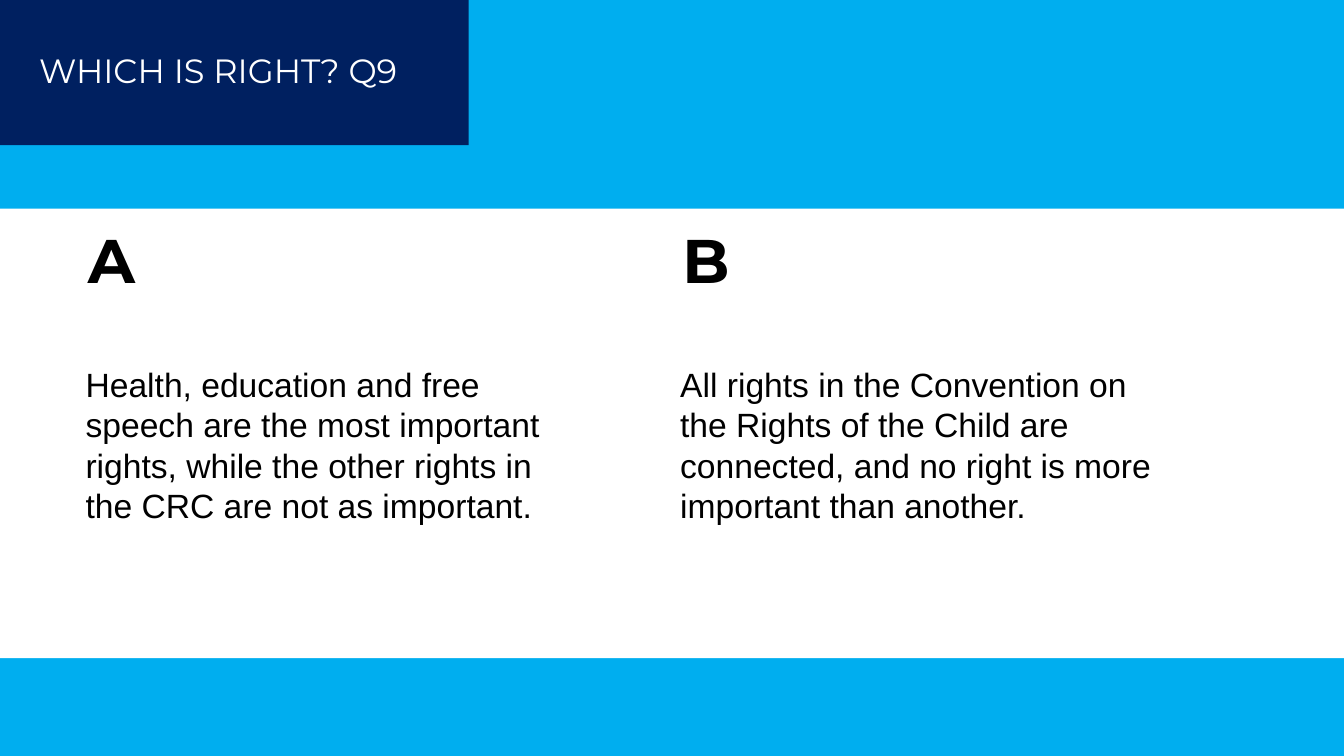
from pptx import Presentation
from pptx.dml.color import RGBColor
from pptx.enum.shapes import MSO_SHAPE
from pptx.util import Inches, Pt

WIDE, HIGH = Inches(13.33), Inches(7.5)
SKY = RGBColor(0x00, 0xAE, 0xEF)
NAVY = RGBColor(0x00, 0x20, 0x60)
WHITE = RGBColor(0xFF, 0xFF, 0xFF)
BLACK = RGBColor(0x00, 0x00, 0x00)

CHOICES = [
    ("A", 5.63, 38.18, "Health, education and free speech are the most important "
     "rights, while the other rights in the CRC are not as important."),
    ("B", 49.87, 36.68, "All rights in the Convention on the Rights of the Child are "
     "connected, and no right is more important than another."),
]


def place(left, top, width, height):
    """Turn percentages of the slide into lengths."""
    return (int(WIDE * left / 100), int(HIGH * top / 100),
            int(WIDE * width / 100), int(HIGH * height / 100))


def add_block(slide, area, fill):
    """Draw a plain filled rectangle."""
    block = slide.shapes.add_shape(MSO_SHAPE.RECTANGLE, *place(*area))
    block.shadow.inherit = False
    block.fill.solid()
    block.fill.fore_color.rgb = fill
    block.line.fill.background()


def add_text(slide, area, text, size=24, font="Arial", color=BLACK, bold=False, inset=None):
    """Write wrapped text in a box."""
    frame = slide.shapes.add_textbox(*place(*area)).text_frame
    frame.word_wrap = True
    if inset is not None:
        frame.margin_left = frame.margin_right = inset
        frame.margin_top = frame.margin_bottom = inset
    run = frame.paragraphs[0].add_run()
    run.text = text
    run.font.size = Pt(size)
    run.font.name = font
    run.font.bold = bold
    run.font.color.rgb = color


def add_choice(slide, letter, left, width, text):
    """Set a letter above its statement."""
    add_text(slide, (left, 27.8, 5.55, 13.07), letter, size=44,
             font="Montserrat", bold=True, inset=Inches(0.12))
    add_text(slide, (left, 47.47, width, 22.93), text)


def main():
    """Build and save the quiz slide."""
    deck = Presentation()
    deck.slide_width, deck.slide_height = WIDE, HIGH
    slide = deck.slides.add_slide(deck.slide_layouts[6])
    slide.background.fill.solid()
    slide.background.fill.fore_color.rgb = SKY
    add_block(slide, (0, 27.6, 100, 59.47), WHITE)
    add_block(slide, (0, 0, 34.88, 19.2), NAVY)
    add_text(slide, (2.18, 6, 30.98, 6.67), "WHICH IS RIGHT? Q9",
             font="Montserrat", color=WHITE)
    for choice in CHOICES:
        add_choice(slide, *choice)
    deck.save("out.pptx")


if __name__ == "__main__":
    main()
